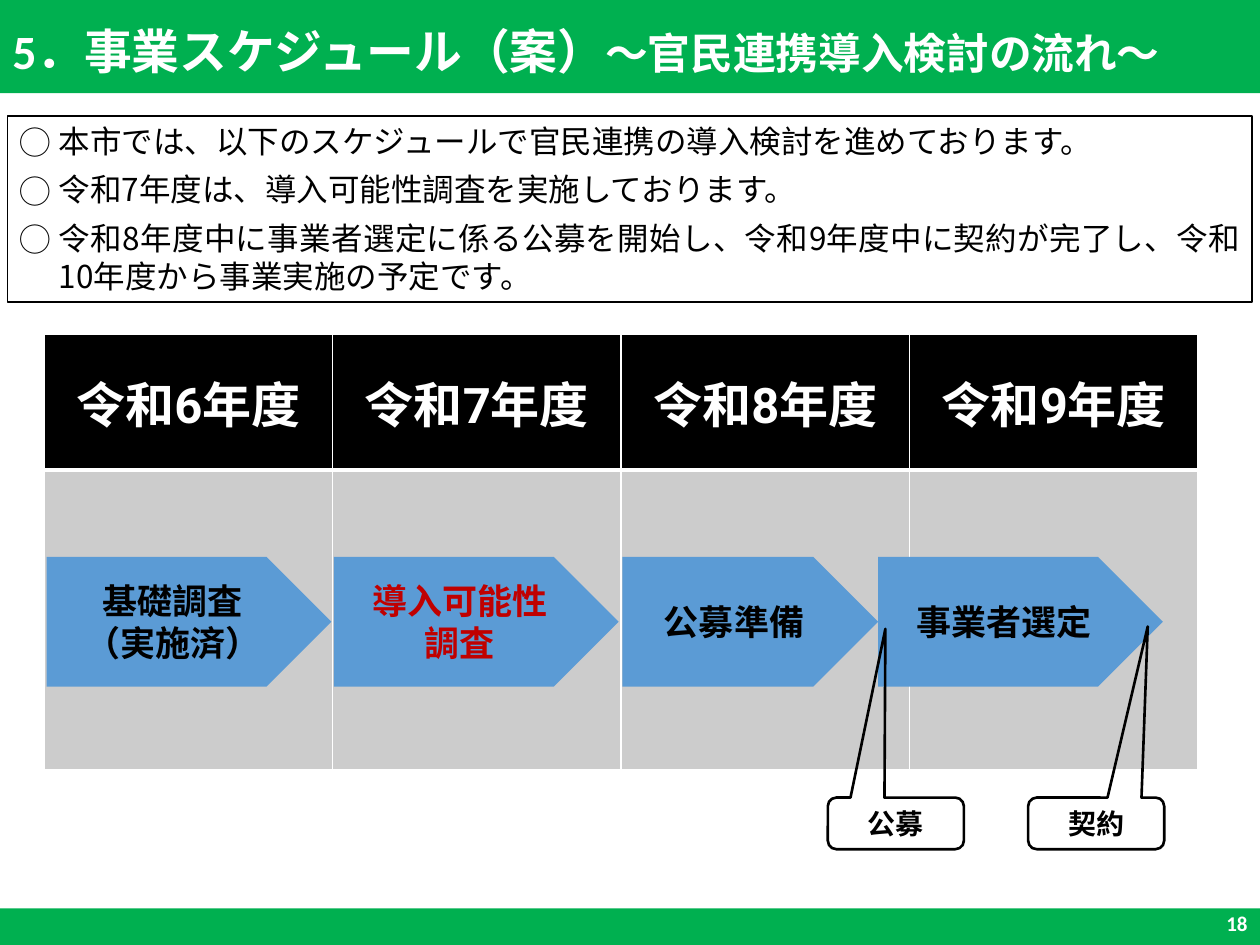
from lxml import etree
from pptx import Presentation
from pptx.dml.color import RGBColor
from pptx.enum import shapes, text
from pptx.oxml.ns import qn
from pptx.util import Inches, Pt

WHITE = RGBColor(255, 255, 255)
BLACK = RGBColor(0, 0, 0)
GREEN = RGBColor(0x00, 0xB0, 0x50)
BLUE = RGBColor(0x5B, 0x9B, 0xD5)
GREY = RGBColor(0xCC, 0xCC, 0xCC)
RED = RGBColor(0xC0, 0x00, 0x00)
NOTO = "Noto Sans CJK JP"
KIND = shapes.MSO_SHAPE
ALIGN = text.PP_ALIGN
MID = text.MSO_ANCHOR.MIDDLE

# Content
TITLE = [("5．事業スケジュール（案）", 27.3), ("～官民連携導入検討の流れ～", 24.4)]
NOTES = [
    "本市では、以下のスケジュールで官民連携の導入検討を進めております。",
    "令和7年度は、導入可能性調査を実施しております。",
    "令和8年度中に事業者選定に係る公募を開始し、令和9年度中に契約が完了し、"
    "令和10年度から事業実施の予定です。",
]
YEARS = ["令和6年度", "令和7年度", "令和8年度", "令和9年度"]
STEPS = [  # lines, left, width, colour
    (["基礎調査", "（実施済）"], 0.37, 2.26, BLACK),
    (["導入可能性", "調査"], 2.65, 2.26, RED),
    (["公募準備"], 4.94, 2.03, BLACK),
    (["事業者選定"], 6.97, 2.26, BLACK),
]
CALLS = [  # label, left, tip offsets
    ("公募", 6.57, (-0.077, -3.768)),
    ("契約", 8.16, (0.379, -3.814)),
]
WIDE, HIGH = 10, 7.5
COL, ROWS = 2.29, (1.08, 2.38)

deck = Presentation()
deck.slide_width, deck.slide_height = Inches(WIDE), Inches(HIGH)
slide = deck.slides.add_slide(deck.slide_layouts[6])


def style(para, size, face, color, bold=False, align=None):
    if align is not None:
        para.alignment = align
    font = para.font
    font.size, font.name, font.bold = Pt(size), face, bold
    font.color.rgb = color
    east = etree.SubElement(font._element, qn("a:ea"))
    east.set("typeface", NOTO)


def write(frame, lines, *look):
    frame.word_wrap = True
    frame.vertical_anchor = MID
    for i, line in enumerate(lines):
        para = frame.add_paragraph() if i else frame.paragraphs[0]
        para.text = line
        style(para, *look)


def draw(kind, box, fill=None, line=None):
    shape = slide.shapes.add_shape(kind, *map(Inches, box))
    shape.shadow.inherit = False
    if fill is None:
        shape.fill.background()
    else:
        shape.fill.solid()
        shape.fill.fore_color.rgb = fill
    if line is None:
        shape.line.fill.background()
    else:
        shape.line.color.rgb, shape.line.width = BLACK, Pt(line)
    return shape


def edge(cell, side, width):
    ln = etree.Element(qn(f"a:ln{side}"), w=str(Pt(width)))
    fill = etree.SubElement(ln, qn("a:solidFill"))
    etree.SubElement(fill, qn("a:srgbClr"), val=str(WHITE))
    return ln


# Bands, page number and title
draw(KIND.RECTANGLE, (0, 7.21, WIDE, HIGH - 7.21), GREEN)
draw(KIND.RECTANGLE, (0, 0, WIDE, 0.74), GREEN)
page = slide.shapes.add_textbox(*map(Inches, (7.75, 7.13, 2.25, 0.4)))
write(page.text_frame, ["18"], 12, "Calibri", WHITE, True, ALIGN.RIGHT)
head = slide.shapes.add_textbox(*map(Inches, (0, 0.06, 9.72, 0.74))).text_frame
head.word_wrap, head.vertical_anchor = True, MID
para = head.paragraphs[0]
para.line_spacing = 0.9
style(para, TITLE[0][1], "Calibri", WHITE, True)
for words, size in TITLE:
    run = para.add_run()
    run.text, run.font.size = words, Pt(size)

# Year table
grid = slide.shapes.add_table(
    len(ROWS), len(YEARS), Inches(0.35), Inches(2.65),
    Inches(COL * len(YEARS)), Inches(sum(ROWS))).table
for c, year in enumerate(YEARS):
    grid.columns[c].width = Inches(COL)
    for r, tall in enumerate(ROWS):
        grid.rows[r].height = Inches(tall)
        cell = grid.cell(r, c)
        cell.vertical_anchor = MID
        cell.fill.solid()
        cell.fill.fore_color.rgb = GREY if r else BLACK
        widths = {"L": 1, "R": 1, "T": 1 if r == 0 else 3, "B": 1 if r else 3}
        props = cell._tc.get_or_add_tcPr()
        for i, (side, width) in enumerate(widths.items()):
            props.insert(i, edge(cell, side, width))
    para = grid.cell(0, c).text_frame.paragraphs[0]
    para.text = year
    style(para, 28, "Roboto", WHITE, True, ALIGN.CENTER)

# Step arrows
for lines, left, width, color in STEPS:
    step = draw(KIND.PENTAGON, (left, 4.42, width, 1.03), BLUE)
    write(step.text_frame, lines, 20, "Calibri", color, True, ALIGN.CENTER)

# Framed notes
frame = draw(KIND.RECTANGLE, (0.06, 0.92, 9.88, 1.48), line=1).text_frame
frame.word_wrap, frame.vertical_anchor = True, text.MSO_ANCHOR.TOP
for i, note in enumerate(NOTES):
    para = frame.add_paragraph() if i else frame.paragraphs[0]
    para.text = note
    para.space_after = Pt(6)
    props = para._p.get_or_add_pPr()
    props.set("marL", str(Inches(0.31)))
    props.set("indent", str(-Inches(0.31)))
    etree.SubElement(props, qn("a:buFont"), typeface=NOTO)
    etree.SubElement(props, qn("a:buChar"), char="◯")
    style(para, 18, NOTO, BLACK, False, ALIGN.JUSTIFY)

# Callouts
for label, left, tip in CALLS:
    call = draw(KIND.ROUNDED_RECTANGULAR_CALLOUT, (left, 6.33, 1.08, 0.41), line=1.5)
    call.adjustments[0], call.adjustments[1] = tip
    write(call.text_frame, [label], 16, NOTO, BLACK, True, ALIGN.CENTER)

deck.save("out.pptx")
